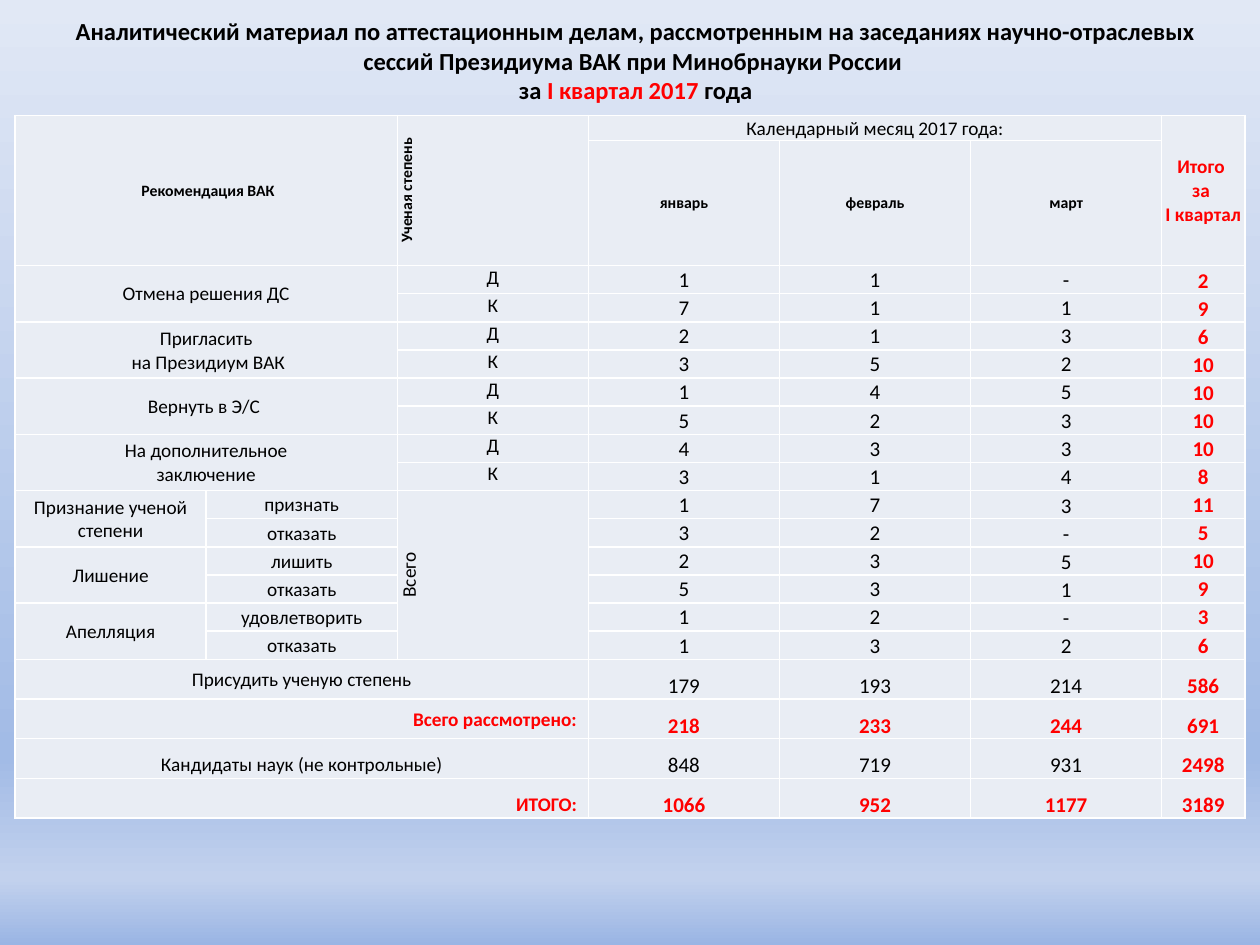
"""Build a slide with a quarterly table of attestation decisions."""
from lxml import etree
from pptx import Presentation
from pptx import util as u
from pptx.dml.color import RGBColor
from pptx.enum import text
from pptx.oxml import ns

BLACK, RED, WHITE, PALE = "000000", "FF0000", "FFFFFF", "E9EDF4"
MIDDLE, BOTTOM, TOP = text.MSO_ANCHOR.MIDDLE, text.MSO_ANCHOR.BOTTOM, text.MSO_ANCHOR.TOP
CENTER, RIGHT = text.PP_ALIGN.CENTER, text.PP_ALIGN.RIGHT
SKY = [(0, "9AB5E4"), (7, "C2D1ED"), (20, "A2BBE6"), (100, "E1E8F5")]
TITLE = [
    ("Аналитический материал по аттестационным делам, рассмотренным на заседаниях "
     "научно-отраслевых сессий Президиума ВАК при Минобрнауки России \vза ", BLACK),
    ("I квартал 2017 ", RED),
    ("года", BLACK),
]
MONTHS = ["январь", "февраль", "март"]
DEGREE_GROUPS = ["Отмена решения ДС", "Пригласить\n на Президиум ВАК",
                 "Вернуть в Э/С ", "На дополнительное\nзаключение"]
OUTCOME_GROUPS = [("Признание ученой степени", "признать"), ("Лишение", "лишить"),
                  ("Апелляция", "удовлетворить")]
DEGREE_VALUES = ["1 1 - 2", "7 1 1 9", "2 1 3 6", "3 5 2 10",
                 "1 4 5 10", "5 2 3 10", "4 3 3 10", "3 1 4 8"]
OUTCOME_VALUES = ["1 7 3 11", "3 2 - 5", "2 3 5 10", "5 3 1 9", "1 2 - 3", "1 3 2 6"]
SUMMARY = [
    ("Присудить ученую степень", "179 193 214 586", False, 1),
    ("Всего рассмотрено:", "218 233 244 691", True, 1),
    ("Кандидаты наук (не контрольные)", "848 719 931 2498", False, 1.5),
    ("ИТОГО:", "1066 952 1177 3189", True, 1.5),
]
COLUMNS = [91 / 6] * 6 + [6.6]
ROWS = [2.53, 6.8] + [41.73 / 14] * 14 + [3.87] * 4


def color(value):
    """Turn a hex string into a colour."""
    return RGBColor.from_string(value)


class Painter:
    """Hold the style and the current slide; lengths are percent of the slide."""

    font = "Calibri"

    def __init__(self, deck):
        """Add a title-only slide to the deck."""
        self.deck = deck
        self.page = deck.slides.add_slide(deck.slide_layouts[5])

    def across(self, share):
        """Convert a percentage of the slide width."""
        return u.Emu(round(self.deck.slide_width * share / 100))

    def down(self, share):
        """Convert a percentage of the slide height."""
        return u.Emu(round(self.deck.slide_height * share / 100))

    def background(self, stops):
        """Fill the slide with a gradient that rises from the bottom."""
        fill = self.page.background.fill
        fill.gradient()
        fill.gradient_angle = 90
        stop_list = next(self.page._element.iter(ns.qn("a:gsLst")))
        for stop in list(stop_list):
            stop_list.remove(stop)
        for position, value in stops:
            stop = etree.SubElement(stop_list, ns.qn("a:gs"), pos=str(position * 1000))
            etree.SubElement(stop, ns.qn("a:srgbClr"), val=value)

    def style(self, span, size, value, bold):
        """Format one run."""
        span.font.name, span.font.size = self.font, u.Pt(size)
        span.font.bold, span.font.color.rgb = bold, color(value)

    def title(self, spans, left, top, width, height):
        """Place the title and colour its parts."""
        box = self.page.shapes.title
        box.left, box.top = self.across(left), self.down(top)
        box.width, box.height = self.across(width), self.down(height)
        frame = box.text_frame
        frame.auto_size, frame.word_wrap = text.MSO_AUTO_SIZE.NONE, True
        frame.vertical_anchor, frame.margin_bottom = MIDDLE, u.Inches(0.28)
        para = frame.paragraphs[0]
        para.alignment = CENTER
        for words, value in spans:
            count = len(para.runs)
            for index, line in enumerate(words.split("\v")):
                if index:
                    para.add_line_break()
                para.add_run().text = line
            for span in para.runs[count:]:
                self.style(span, 14, value, True)

    def table(self, columns, rows, left, top):
        """Add a pale table with white borders."""
        frame = self.page.shapes.add_table(
            len(rows), len(columns), self.across(left), self.down(top),
            self.across(sum(columns)), self.down(sum(rows)))
        self.grid = frame.table
        for column, width in zip(self.grid.columns, columns):
            column.width = self.across(width)
        for row, height in zip(self.grid.rows, rows):
            row.height = self.down(height)
        for cell in self.grid.iter_cells():
            properties = cell._tc.get_or_add_tcPr()
            for side in ("a:lnL", "a:lnR", "a:lnT", "a:lnB"):
                line = etree.SubElement(properties, ns.qn(side), w=str(u.Pt(1)))
                solid = etree.SubElement(line, ns.qn("a:solidFill"))
                etree.SubElement(solid, ns.qn("a:srgbClr"), val=WHITE)
            cell.fill.solid()
            cell.fill.fore_color.rgb = color(PALE)

    def cell(self, row, column, words, size=11, value=BLACK, bold=False, tall=1, wide=1,
             anchor=MIDDLE, align=CENTER, spacing=1, inset=0.01, upright=False):
        """Write one cell, merging it over its rows and columns."""
        cell = self.grid.cell(row, column)
        if tall > 1 or wide > 1:
            cell.merge(self.grid.cell(row + tall - 1, column + wide - 1))
        cell.margin_left = cell.margin_right = cell.margin_top = u.Inches(inset)
        cell.margin_bottom = 0
        cell.vertical_anchor = anchor
        cell.text_frame.text = words
        if upright:
            cell._tc.get_or_add_tcPr().set("vert", "vert270")
        for para in cell.text_frame.paragraphs:
            para.alignment, para.line_spacing = align, float(spacing)
            properties = para._p.get_or_add_pPr()
            if upright:
                properties.set("marL", str(u.Inches(0.08)))
            if upright or align == RIGHT:
                properties.set("marR", str(u.Inches(0.08)))
            for span in para.runs:
                self.style(span, size, value, bold)

    def values(self, row, figures, march=MIDDLE, total=BOTTOM, strong=False, spacing=1):
        """Write the three months and the red total of a row."""
        *months, sum_text = figures.split()
        for column, (figure, anchor) in enumerate(zip(months, [MIDDLE, MIDDLE, march]), 3):
            self.cell(row, column, figure, 12, RED if strong else BLACK, strong,
                      anchor=anchor, spacing=spacing)
        self.cell(row, 6, sum_text, 12, RED, True, anchor=total)


def main():
    """Build and save the deck."""
    deck = Presentation()
    deck.slide_width, deck.slide_height = u.Inches(10), u.Inches(7.5)
    painter = Painter(deck)
    painter.background(SKY)
    painter.title(TITLE, 2, 2.8, 96.9, 10.27)
    painter.table(COLUMNS, ROWS, 1.2, 12.2)

    painter.cell(0, 0, "\u00a0Рекомендация ВАК", 9, bold=True, tall=2, wide=2)
    painter.cell(0, 2, "Ученая степень", 9, bold=True, tall=2, inset=0, upright=True)
    painter.cell(0, 3, "Календарный месяц 2017 года:", wide=3, anchor=BOTTOM)
    painter.cell(0, 6, "Итого \nза \nI квартал", value=RED, bold=True, tall=2)
    for column, month in enumerate(MONTHS, 3):
        painter.cell(1, column, month, 9, bold=True)

    for index, group in enumerate(DEGREE_GROUPS):
        painter.cell(2 + 2 * index, 0, group, tall=2, wide=2)
    for row, figures in enumerate(DEGREE_VALUES, 2):
        painter.cell(row, 2, "ДК"[row % 2], anchor=TOP, inset=0)
        painter.values(row, figures)

    painter.cell(10, 2, "Всего", tall=6, inset=0, upright=True)
    for index, (group, outcome) in enumerate(OUTCOME_GROUPS):
        row = 10 + 2 * index
        painter.cell(row, 0, group, tall=2)
        painter.cell(row, 1, outcome)
        painter.cell(row + 1, 1, "отказать")
    for row, figures in enumerate(OUTCOME_VALUES, 10):
        painter.values(row, figures, march=BOTTOM, total=MIDDLE)

    for row, (label, figures, strong, spacing) in enumerate(SUMMARY, 16):
        painter.cell(row, 0, label, value=RED if strong else BLACK, bold=strong, wide=3,
                     align=RIGHT if strong else CENTER, spacing=spacing)
        painter.values(row, figures, strong=strong, spacing=1.5)
    deck.save("out.pptx")


if __name__ == "__main__":
    main()
